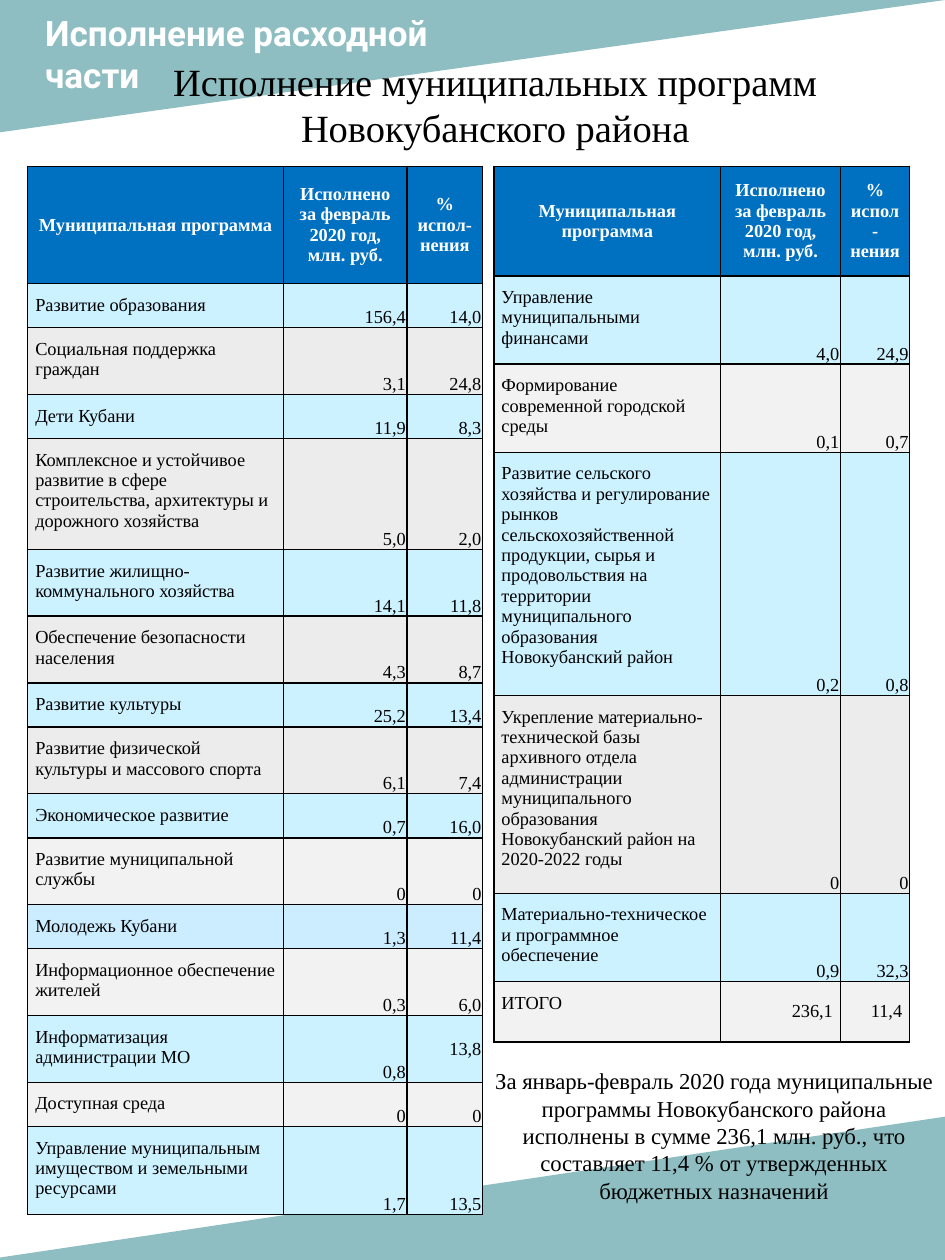
"""Build the slide on spending by municipal programme of the Novokubansk district."""
from collections import namedtuple

from lxml.etree import SubElement
from pptx import Presentation
from pptx.dml.color import RGBColor
from pptx.enum.shapes import MSO_SHAPE
from pptx.enum.text import MSO_ANCHOR, PP_ALIGN
from pptx.oxml.ns import qn
from pptx.util import Inches, Pt

Theme = namedtuple("Theme", "teal header blue sky grey pale black white serif sans "
                   "banner_size title_size note_size cell_size")
theme = Theme("519AA0", "0070C0", "CDF2FF", "CCECFF", "ECECEC", "F2F2F2", "000000", "FFFFFF",
              "Times New Roman", "Roboto", Pt(20), Pt(22), Pt(13), Pt(10.5))


def write(frame, text, face, size, color, align=PP_ALIGN.LEFT, bold=False):
    frame.word_wrap = True
    frame.text = text
    for para in frame.paragraphs:
        para.alignment = align
        para.font.name, para.font.size, para.font.bold = face, size, bold
        para.font.color.rgb = RGBColor.from_string(color)


def style_cell(cell, text, fill, color, align, anchor, bold=False, tight=False):
    margins = (0.01, 0.01, 0.01, 0) if tight else (0.06, 0.09, 0.06, 0.09)
    cell.margin_left, cell.margin_top, cell.margin_right, cell.margin_bottom = map(Inches, margins)
    cell.vertical_anchor = anchor
    write(cell.text_frame, text, theme.serif, theme.cell_size, color, align, bold)
    properties = cell._tc.get_or_add_tcPr()
    for side in ("a:lnL", "a:lnR", "a:lnT", "a:lnB"):
        line = SubElement(properties, qn(side), w=str(Pt(1)))
        SubElement(SubElement(line, qn("a:solidFill")), qn("a:srgbClr"), val=theme.black)
    cell.fill.solid()
    cell.fill.fore_color.rgb = RGBColor.from_string(fill)


deck = Presentation()
deck.slide_width, deck.slide_height = Inches(7.5), Inches(10)
page = deck.slides.add_slide(deck.slide_layouts[5])

for place, flip in (((0, 0, 7.5, 1.05), "flipH"), ((-0.13, 8.86, 7.65, 1.14), "flipV")):
    triangle = page.shapes.add_shape(MSO_SHAPE.RIGHT_TRIANGLE, *map(Inches, place))
    triangle.rotation = 180
    triangle._element.spPr.xfrm.set(flip, "1")
    triangle.shadow.inherit = False
    triangle.line.fill.background()
    triangle.fill.solid()
    triangle.fill.fore_color.rgb = RGBColor.from_string(theme.teal)
    tint = triangle._element.spPr.find(qn("a:solidFill")).find(qn("a:srgbClr"))
    SubElement(tint, qn("a:alpha"), val="64000")

banner = page.shapes.add_textbox(Inches(0.26), Inches(0.04), Inches(4.87), Inches(0.77))
write(banner.text_frame, "Исполнение расходной\nчасти", theme.sans, theme.banner_size,
      theme.white, bold=True)

title = page.shapes.title
title.left, title.top, title.width, title.height = map(Inches, (0.64, 0.41, 6.58, 0.84))
title.text_frame.vertical_anchor = MSO_ANCHOR.TOP
write(title.text_frame, "Исполнение муниципальных программ Новокубанского района",
      theme.serif, theme.title_size, theme.black, PP_ALIGN.CENTER)
page.shapes._spTree.append(title._element)

headings = ("Муниципальная программа", "Исполнено за февраль 2020 год, млн. руб.", "% испол-нения")
left_programmes = [
    ("Развитие образования", "156,4", "14,0", 0.35, theme.blue),
    ("Социальная поддержка граждан", "3,1", "24,8", 0.53, theme.grey),
    ("Дети Кубани", "11,9", "8,3", 0.35, theme.blue),
    ("Комплексное и устойчивое развитие в сфере строительства, архитектуры и дорожного хозяйства",
     "5,0", "2,0", 0.88, theme.grey),
    ("Развитие жилищно-коммунального хозяйства", "14,1", "11,8", 0.53, theme.blue),
    ("Обеспечение безопасности населения", "4,3", "8,7", 0.53, theme.grey),
    ("Развитие культуры", "25,2", "13,4", 0.35, theme.blue),
    ("Развитие физической культуры и массового спорта", "6,1", "7,4", 0.53, theme.grey),
    ("Экономическое развитие", "0,7", "16,0", 0.35, theme.blue),
    ("Развитие муниципальной службы", "0", "0", 0.53, theme.pale),
    ("Молодежь Кубани", "1,3", "11,4", 0.35, theme.sky),
    ("Информационное обеспечение жителей", "0,3", "6,0", 0.53, theme.pale),
    ("Информатизация администрации МО", "0,8", "13,8", 0.53, theme.blue),
    ("Доступная среда", "0", "0", 0.35, theme.pale),
    ("Управление муниципальным имуществом и земельными ресурсами", "1,7", "13,5", 0.7, theme.blue),
]
right_programmes = [
    ("Управление муниципальными финансами", "4,0", "24,9", 0.7, theme.blue),
    ("Формирование современной городской среды", "0,1", "0,7", 0.7, theme.pale),
    ("Развитие сельского хозяйства и регулирование рынков сельскохозяйственной продукции, сырья "
     "и продовольствия на территории муниципального образования Новокубанский район",
     "0,2", "0,8", 1.93, theme.blue),
    ("Укрепление материально-технической базы архивного отдела администрации муниципального "
     "образования Новокубанский район на 2020-2022 годы", "0", "0", 1.57, theme.grey),
    ("Материально-техническое и программное обеспечение", "0,9", "32,3", 0.7, theme.blue),
    ("ИТОГО", "236,1", "11,4", 0.48, theme.pale),
]

for left, widths, header_height, programmes in (
        (0.22, (2.03, 0.98, 0.6), 0.93, left_programmes),
        (3.92, (1.8, 0.95, 0.55), 0.87, right_programmes)):
    heights = [header_height] + [programme[3] for programme in programmes]
    table = page.shapes.add_table(len(heights), 3, Inches(left), Inches(1.32),
                                  Inches(sum(widths)), Inches(sum(heights))).table
    table.horz_banding = False
    for column, width in zip(table.columns, widths):
        column.width = Inches(width)
    for row, height in zip(table.rows, heights):
        row.height = Inches(height)
    for cell, heading in zip(table.rows[0].cells, headings):
        style_cell(cell, heading, theme.header, theme.white, PP_ALIGN.CENTER,
                   MSO_ANCHOR.MIDDLE, bold=True)
    for number, (name, spent, percent, height, fill) in enumerate(programmes, 1):
        style_cell(table.cell(number, 0), name, fill, theme.black, PP_ALIGN.LEFT, MSO_ANCHOR.TOP)
        total = name == "ИТОГО"
        for column, value in enumerate((spent, percent), 1):
            centred = total or value == "13,8"
            anchor = MSO_ANCHOR.MIDDLE if centred else MSO_ANCHOR.BOTTOM
            style_cell(table.cell(number, column), value, fill, theme.black, PP_ALIGN.RIGHT,
                       anchor, tight=not total)

note = page.shapes.add_textbox(Inches(3.79), Inches(8.42), Inches(3.75), Inches(1.19))
write(note.text_frame, "За январь-февраль 2020 года муниципальные программы Новокубанского района "
      "исполнены в сумме 236,1 млн. руб., что составляет 11,4 % от утвержденных бюджетных "
      "назначений", theme.serif, theme.note_size, theme.black, PP_ALIGN.CENTER)

deck.save("out.pptx")
